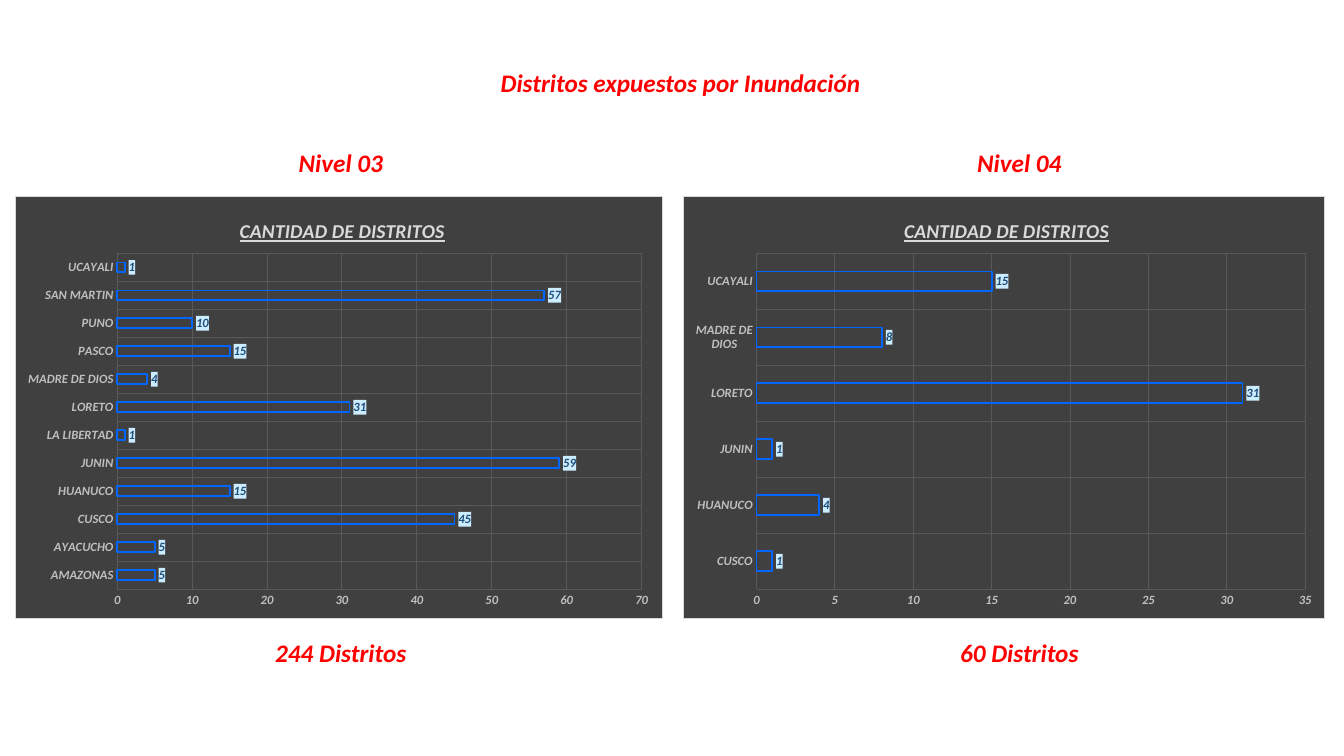
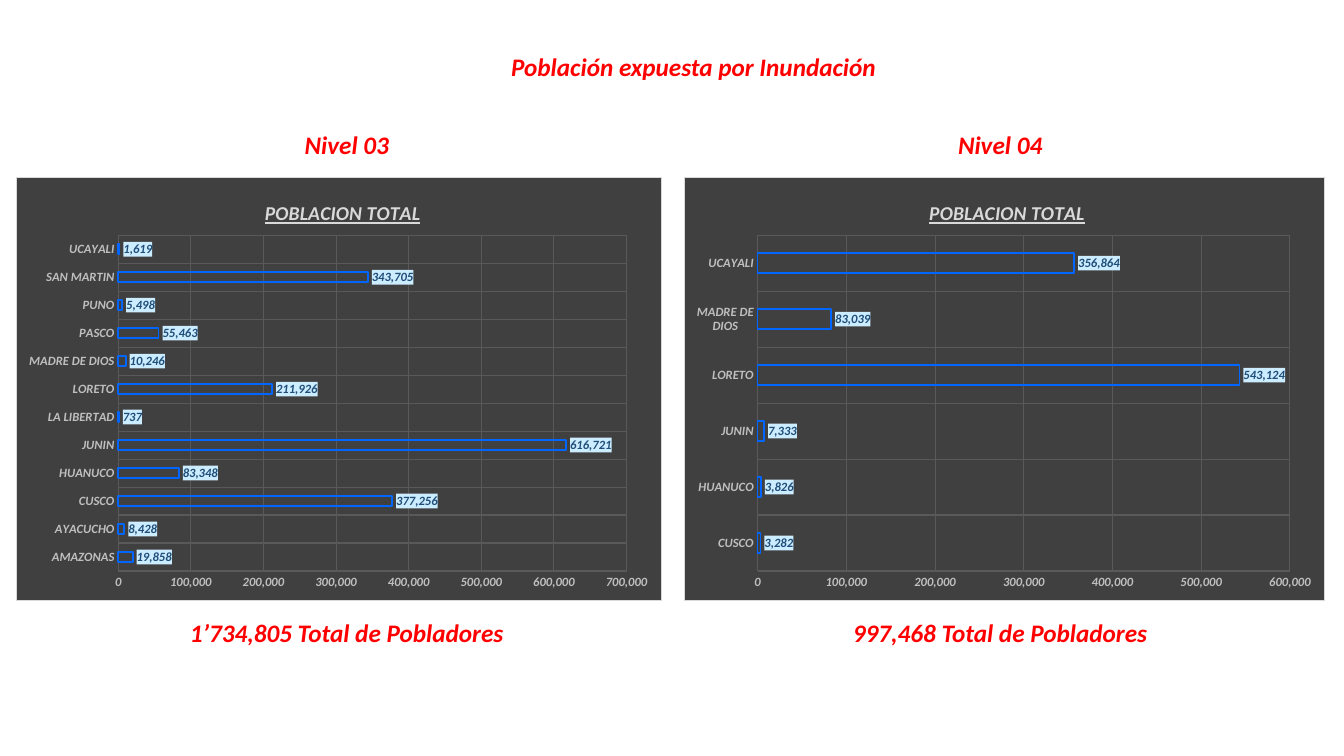
"""Build two slides comparing flood exposure by department at levels 03 and 04."""
from lxml.etree import SubElement
from pptx import Presentation
from pptx.chart.data import CategoryChartData
from pptx.dml.color import RGBColor
from pptx.enum.chart import XL_CHART_TYPE, XL_LABEL_POSITION, XL_TICK_MARK
from pptx.enum.text import PP_ALIGN
from pptx.oxml import parse_xml
from pptx.oxml.ns import nsdecls, qn
from pptx.util import Inches, Pt

FONT = "Calibri"
COLORS = {
    "heading": "FF0000",
    "panel": "404040",
    "border": "D9D9D9",
    "grid": "595959",
    "axis": "BFBFBF",
    "bar": "0066FF",
    "label": "1F4E79",
    "label_fill": "CCECFF",
}
CHART_HEIGHT = 4.2
PLOT_TOP, PLOT_HEIGHT = 0.57, 3.34
TITLE_TOP = 0.18

LEVEL_3 = ["AMAZONAS", "AYACUCHO", "CUSCO", "HUANUCO", "JUNIN", "LA LIBERTAD",
           "LORETO", "MADRE DE DIOS", "PASCO", "PUNO", "SAN MARTIN", "UCAYALI"]
LEVEL_4 = ["CUSCO", "HUANUCO", "JUNIN", "LORETO", "MADRE DE DIOS", "UCAYALI"]

SLIDES = [
    {
        "heading": ("Distritos expuestos por Inundación", 6.75, 0.62, 3.81),
        "chart_title": "CANTIDAD DE DISTRITOS",
        "chart_top": 1.94,
        "level_top": 1.41,
        "total_top": 6.27,
        "panels": [
            {"level": "Nivel 03", "total": "244 Distritos", "total_width": 1.51,
             "center": 3.38, "left": 0.15, "width": 6.43, "title_left": 2.19,
             "plot": (1.01, 5.21), "axis": (70, 10), "cats": LEVEL_3,
             "vals": [5, 5, 45, 15, 59, 1, 31, 4, 15, 10, 57, 1]},
            {"level": "Nivel 04", "total": "60 Distritos", "total_width": 1.55,
             "center": 10.11, "left": 6.77, "width": 6.37, "title_left": 2.16,
             "plot": (0.73, 5.45), "axis": (35, 5), "cats": LEVEL_4,
             "vals": [1, 4, 1, 31, 8, 15]},
        ],
    },
    {
        "heading": ("Población expuesta por Inundación", 6.88, 0.46, 3.86),
        "chart_title": "POBLACION TOTAL",
        "chart_top": 1.76,
        "level_top": 1.23,
        "total_top": 6.08,
        "panels": [
            {"level": "Nivel 03", "total": "1’734,805 Total de Pobladores",
             "total_width": 3.36, "center": 3.44, "left": 0.16, "width": 6.41,
             "title_left": 2.43, "plot": (1.01, 5.05),
             "axis": (700000, 100000), "cats": LEVEL_3,
             "vals": [19858, 8428, 377256, 83348, 616721, 737, 211926, 10246,
                      55463, 5498, 343705, 1619]},
            {"level": "Nivel 04", "total": "997,468 Total de Pobladores",
             "total_width": 3.18, "center": 9.92, "left": 6.78, "width": 6.36,
             "title_left": 2.4, "plot": (0.73, 5.29),
             "axis": (600000, 100000), "cats": LEVEL_4,
             "vals": [3282, 3826, 7333, 543124, 83039, 356864]},
        ],
    },
]


def color(name):
    """Return a palette colour."""
    return RGBColor.from_string(COLORS[name])


def style_font(font, size, name):
    """Apply the bold italic type shared by all text."""
    font.name, font.size = FONT, Pt(size)
    font.bold = font.italic = True
    font.color.rgb = color(name)


def add_caption(s, text, center, top, width, wrap=True):
    """Add a red caption around a horizontal centre."""
    box = s.shapes.add_textbox(Inches(center - width / 2), Inches(top),
                               Inches(width), Inches(0.4))
    tf = box.text_frame
    tf.word_wrap = wrap
    tf.text = text
    p = tf.paragraphs[0]
    p.alignment = PP_ALIGN.CENTER
    style_font(p.runs[0].font, 18, "heading")


def make_layout(target=None, **fractions):
    """Return a manual chart layout."""
    layout = parse_xml(f"<c:layout {nsdecls('c')}><c:manualLayout/></c:layout>")
    manual = layout[0]
    settings = {"xMode": "edge", "yMode": "edge", **fractions}
    if target:
        settings = {"layoutTarget": target, **settings}
    for tag, value in settings.items():
        SubElement(manual, qn(f"c:{tag}")).set("val", str(value))
    return layout


def make_fill(fill, border=None):
    """Return chart shape properties with a solid fill and optional border."""
    solid = '<a:solidFill><a:srgbClr val="{}"/></a:solidFill>'
    line = f'<a:ln w="{Pt(0.75)}">{solid.format(COLORS[border])}</a:ln>' if border else ""
    return parse_xml(f"<c:spPr {nsdecls('c', 'a')}>"
                     f"{solid.format(COLORS[fill])}{line}</c:spPr>")


def style_axis(axis):
    """Format an axis with grid lines and no axis line."""
    axis.major_tick_mark = axis.minor_tick_mark = XL_TICK_MARK.NONE
    axis.format.line.fill.background()
    axis.has_major_gridlines = True
    line = axis.major_gridlines.format.line
    line.color.rgb, line.width = color("grid"), Pt(0.75)
    style_font(axis.tick_labels.font, 9, "axis")


def style_bars(plot):
    """Outline the bars and add highlighted value labels."""
    plot.gap_width, plot.overlap = 182, -50
    plot.vary_by_categories = False
    series = plot.series[0]
    series.invert_if_negative = False
    series.format.fill.background()
    series.format.line.color.rgb = color("bar")
    series.format.line.width = Pt(1.25)
    labels = series.data_labels
    labels.show_value = True
    labels.position = XL_LABEL_POSITION.OUTSIDE_END
    labels.number_format, labels.number_format_is_linked = "#,##0", False
    style_font(labels.font, 9, "label")
    labels._element.find(qn("c:txPr")).addprevious(make_fill("label_fill"))


def style_title(chart, text, left, width):
    """Add the underlined chart title at a fixed place."""
    tf = chart.chart_title.text_frame
    tf.text = text
    font = tf.paragraphs[0].runs[0].font
    style_font(font, 14, "border")
    font.underline = True
    title = chart.chart_title._element
    for old in title.findall(qn("c:layout")):
        title.remove(old)
    title.find(qn("c:tx")).addnext(
        make_layout(x=left / width, y=TITLE_TOP / CHART_HEIGHT))


def add_bar_chart(s, title, top, panel):
    """Add a dark bar chart for one level."""
    width = panel["width"]
    data = CategoryChartData(number_format="#,##0")
    data.categories = panel["cats"]
    data.add_series("Series 1", panel["vals"])
    chart = s.shapes.add_chart(
        XL_CHART_TYPE.BAR_CLUSTERED, Inches(panel["left"]), Inches(top),
        Inches(width), Inches(CHART_HEIGHT), data).chart
    chart.has_legend = False
    chart.font.name, chart.font.size = FONT, Pt(10)
    style_title(chart, title, panel["title_left"], width)
    style_axis(chart.category_axis)
    value_axis = chart.value_axis
    style_axis(value_axis)
    value_axis.minimum_scale = 0
    value_axis.maximum_scale, value_axis.major_unit = panel["axis"]
    value_axis.tick_labels.number_format = "#,##0"
    value_axis.tick_labels.number_format_is_linked = False
    style_bars(chart.plots[0])
    chart_xml = chart._chartSpace.find(qn("c:chart"))
    chart_xml.addnext(make_fill("panel", "border"))
    plot_area = chart_xml.find(qn("c:plotArea"))
    for old in plot_area.findall(qn("c:layout")):
        plot_area.remove(old)
    plot_left, plot_width = panel["plot"]
    plot_area.insert(0, make_layout(
        "inner", x=plot_left / width, y=PLOT_TOP / CHART_HEIGHT,
        w=plot_width / width, h=PLOT_HEIGHT / CHART_HEIGHT))


def add_exposure_slide(prs, content):
    """Add one slide with a heading and two captioned charts."""
    s = prs.slides.add_slide(prs.slide_layouts[6])
    add_caption(s, *content["heading"], wrap=False)
    for panel in content["panels"]:
        center = panel["center"]
        add_caption(s, panel["level"], center, content["level_top"], 1.08)
        add_bar_chart(s, content["chart_title"], content["chart_top"], panel)
        add_caption(s, panel["total"], center, content["total_top"],
                    panel["total_width"])


def main():
    """Build and save the presentation."""
    prs = Presentation()
    prs.slide_width, prs.slide_height = Inches(13.33), Inches(7.5)
    for content in SLIDES:
        add_exposure_slide(prs, content)
    prs.save("out.pptx")


if __name__ == "__main__":
    main()
